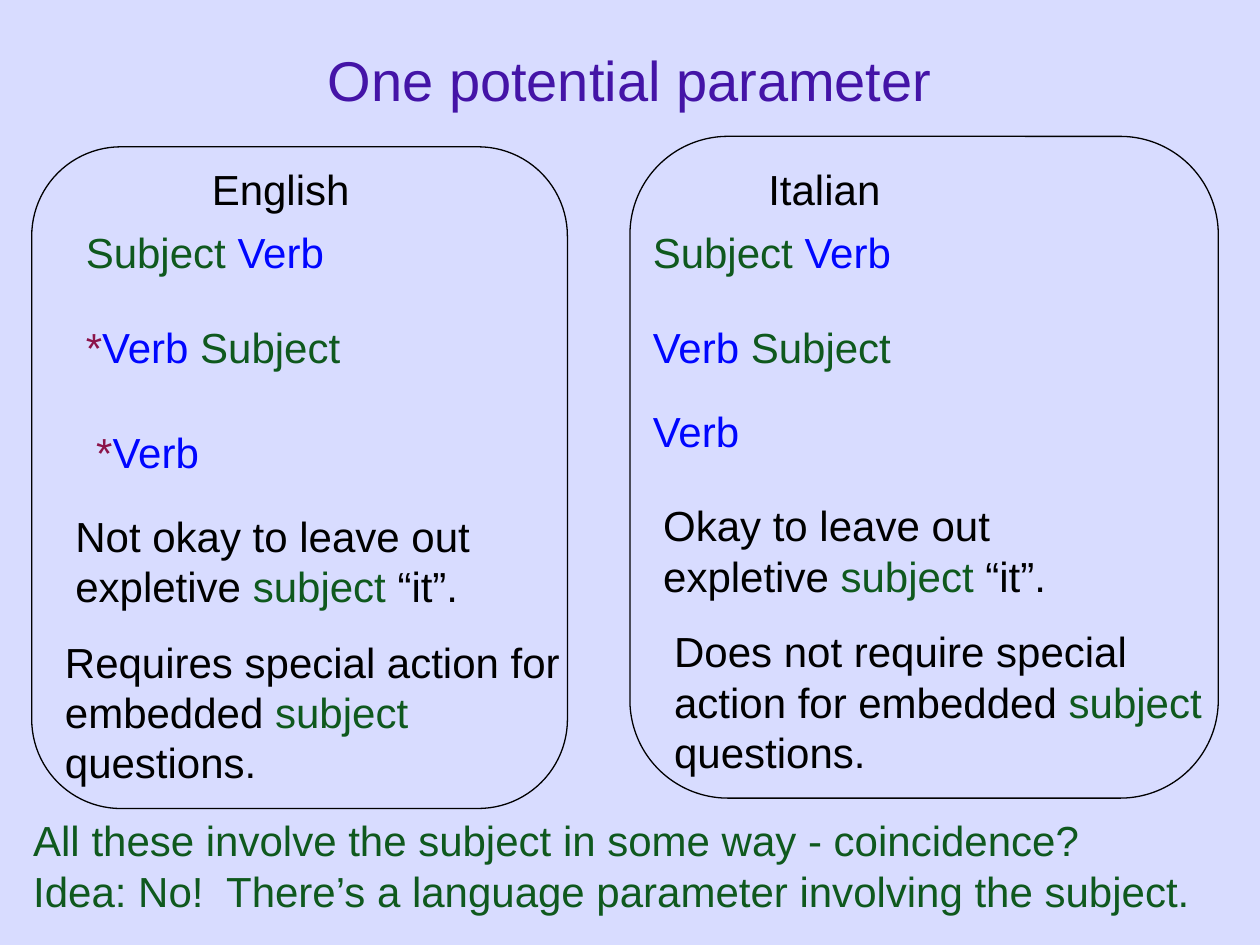
from pptx import Presentation
from pptx.dml.color import RGBColor
from pptx.enum.shapes import MSO_SHAPE
from pptx.enum.text import MSO_ANCHOR, PP_ALIGN
from pptx.util import Cm, Pt

THEME = {
    "font": "Arial", "body": 24, "head": 32, "line": 0.75,
    "back": "D8DCFF", "ink": "000000", "title": "4414A7",
    "subj": "0F591E", "verb": "0006FF", "star": "8C144A",
}

# Each paragraph is a list of (text, colour) runs.
TITLE = [[("One potential parameter", "title")]]
CLOSING = [
    [("All these involve the subject in some way - coincidence?", "subj")],
    [("Idea: No!  There’s a language parameter involving the subject.", "subj")],
]
STAR, VERB = ("*", "star"), ("Verb", "verb")
SUBJ_VERB = [("Subject ", "subj"), VERB]
VERB_SUBJ = [("Verb ", "verb"), ("Subject", "subj")]


def claim(start, end):
    return [(start, "ink"), ("subject", "subj"), (end, "ink")]


# Each panel: frame box, then (left, top, runs) for each row.
PANELS = [
    ((0.64, 2.96, 10.8, 13.34), [
        (4.02, 3.18, [("English", "ink")]),
        (1.48, 4.45, SUBJ_VERB),
        (1.48, 6.35, [STAR, *VERB_SUBJ]),
        (1.69, 8.47, [STAR, VERB]),
        (1.27, 10.16, claim("Not okay to leave out expletive ", " “it”.")),
        (1.06, 12.7, claim("Requires special action for embedded ", " questions.")),
    ]),
    ((12.7, 2.75, 11.86, 13.34), [
        (15.24, 3.18, [("Italian", "ink")]),
        (12.91, 4.45, SUBJ_VERB),
        (12.91, 6.35, VERB_SUBJ),
        (12.91, 8.04, [VERB]),
        (13.12, 9.95, claim("Okay to leave out expletive ", " “it”.")),
        (13.34, 12.49, claim("Does not require special action for embedded ", " questions.")),
    ]),
]
# Width and height of the rows, from top to bottom.
SIZES = [(6.78, 1.27)] + [(9.74, 1.27)] * 3 + [(8.68, 2.29), (11.22, 3.3)]


def color(name):
    return RGBColor.from_string(THEME[name])


def add_text(slide, box, paras, size="body", align=PP_ALIGN.LEFT,
             anchor=MSO_ANCHOR.TOP):
    frame = slide.shapes.add_textbox(*map(Cm, box)).text_frame
    frame.word_wrap = True
    frame.vertical_anchor = anchor
    for i, runs in enumerate(paras):
        para = frame.add_paragraph() if i else frame.paragraphs[0]
        para.alignment = align
        for text, tone in runs:
            run = para.add_run()
            run.text = text
            run.font.name = THEME["font"]
            run.font.size = Pt(THEME[size])
            run.font.color.rgb = color(tone)


def add_frame(slide, box):
    shape = slide.shapes.add_shape(MSO_SHAPE.ROUNDED_RECTANGLE, *map(Cm, box))
    shape.shadow.inherit = False
    shape.fill.background()
    shape.line.color.rgb = color("ink")
    shape.line.width = Pt(THEME["line"])


def main():
    deck = Presentation()
    deck.slide_width, deck.slide_height = Cm(25.4), Cm(19.05)
    slide = deck.slides.add_slide(deck.slide_layouts[6])
    fill = slide.background.fill
    fill.solid()
    fill.fore_color.rgb = color("back")

    for box, rows in PANELS:
        add_frame(slide, box)
        for (left, top, runs), size in zip(rows, SIZES):
            add_text(slide, (left, top, *size), [runs])
    add_text(slide, (0.42, 16.3, 24.97, 2.29), CLOSING)
    add_text(slide, (0, 0, 25.4, 3.18), TITLE, size="head",
             align=PP_ALIGN.CENTER, anchor=MSO_ANCHOR.MIDDLE)
    deck.save("out.pptx")


if __name__ == "__main__":
    main()
